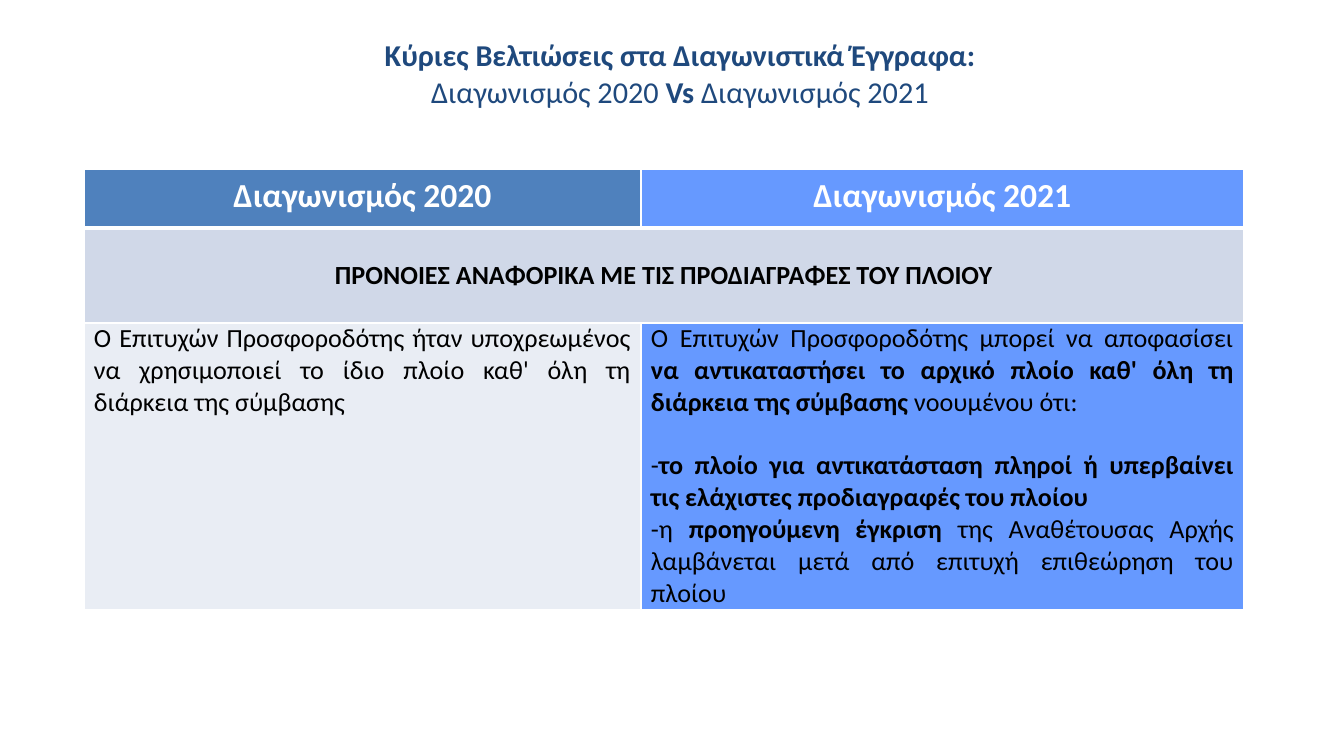
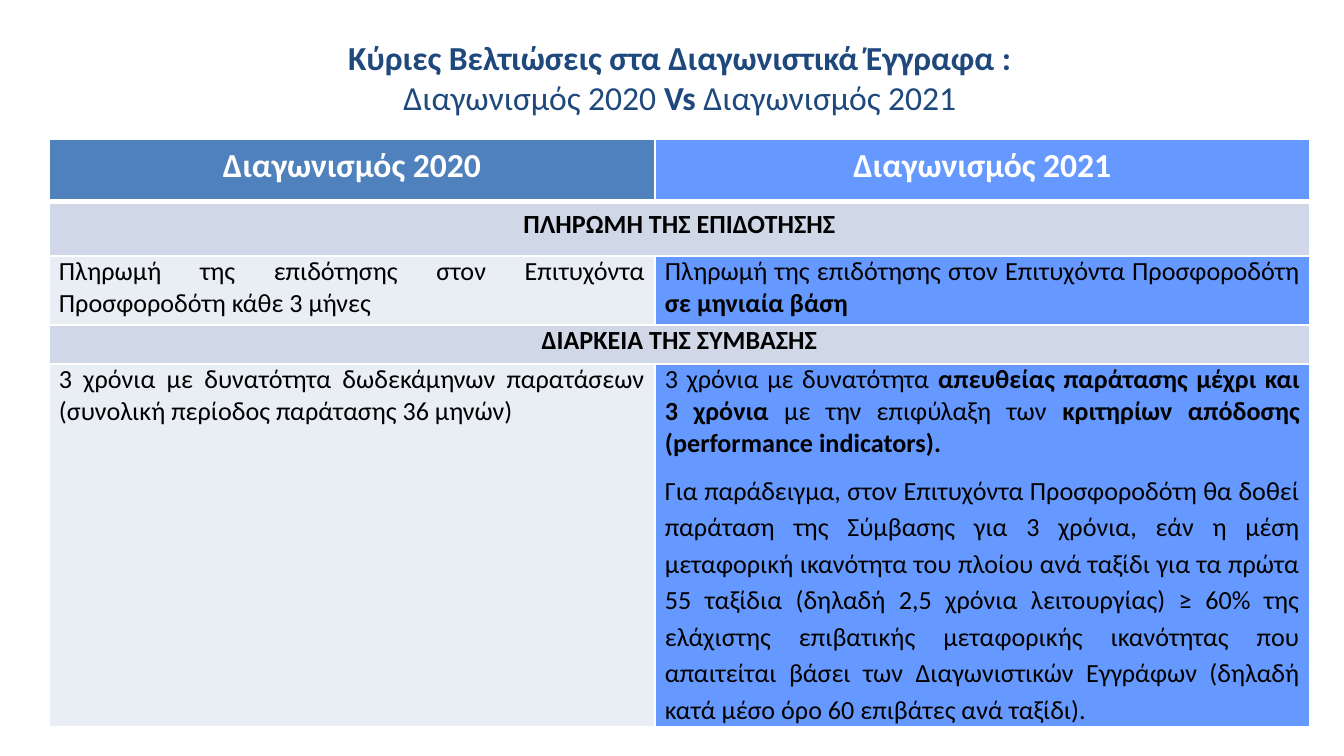
from dataclasses import dataclass

from lxml import etree
from pptx import Presentation, util as u
from pptx.dml import color
from pptx.enum import text
from pptx.oxml import ns

EMU_PER_PX = 914400 / 134.4
FONT = "Calibri"
COLORS = {
    "title": "1F497D",
    "white": "FFFFFF",
    "body": "000000",
    "old": "4F81BD",
    "new": "6699FF",
    "band": "D0D8E8",
    "old_body": "E9EDF4",
}
CENTER, JUSTIFY = text.PP_ALIGN.CENTER, text.PP_ALIGN.JUSTIFY
TOP, MIDDLE = text.MSO_ANCHOR.TOP, text.MSO_ANCHOR.MIDDLE
ROOMY, TIGHT = (13, 7), (10, 0)
YEARS = ("Διαγωνισμός 2020", "Διαγωνισμός 2021")


@dataclass
class Para:
    """Runs are (text, bold) pairs."""
    runs: list
    before: float = 0
    spacing: float = 1


@dataclass
class Band:
    """A heading row that spans both columns."""
    heading: str
    margins: tuple = TIGHT
    anchor: object = TOP


def px(length):
    return u.Emu(round(length * EMU_PER_PX))


def rgb(name):
    return color.RGBColor.from_string(COLORS[name])


def add_run(paragraph, words, size, color_name, bold):
    run = paragraph.add_run()
    run.text = words
    run.font.name = FONT
    run.font.size = u.Pt(size)
    run.font.bold = bold
    run.font.color.rgb = rgb(color_name)


def add_title(slide, top, height, heading, size):
    frame = slide.shapes.add_textbox(px(68), px(top), px(1224), px(height)).text_frame
    frame.word_wrap = True
    frame.vertical_anchor = MIDDLE
    paragraph = frame.paragraphs[0]
    paragraph.alignment = CENTER
    add_run(paragraph, heading, size, "title", True)
    paragraph.add_line_break()
    for words, bold in ((YEARS[0] + " ", False), ("Vs ", True), (YEARS[1], False)):
        add_run(paragraph, words, size, "title", bold)


def set_borders(cell, top, bottom):
    """Draw white borders; the line elements must come before the fill."""
    properties = cell._tc.get_or_add_tcPr()
    widths = {"a:lnL": 1, "a:lnR": 1, "a:lnT": top, "a:lnB": bottom}
    for index, (tag, width) in enumerate(widths.items()):
        line = etree.Element(ns.qn(tag), w=str(u.Pt(width)))
        fill = etree.SubElement(line, ns.qn("a:solidFill"))
        etree.SubElement(fill, ns.qn("a:srgbClr"), val=COLORS["white"])
        properties.insert(index, line)


def fill_cell(cell, paras, fill, align, margins, size=14, color_name="body", anchor=TOP):
    cell.fill.solid()
    cell.fill.fore_color.rgb = rgb(fill)
    cell.margin_left = cell.margin_right = px(margins[0])
    cell.margin_top = cell.margin_bottom = px(margins[1])
    cell.vertical_anchor = anchor
    frame = cell.text_frame
    for index, para in enumerate(paras):
        paragraph = frame.add_paragraph() if index else frame.paragraphs[0]
        paragraph.alignment = align
        paragraph.space_before = u.Pt(para.before)
        paragraph.line_spacing = para.spacing
        for words, bold in para.runs:
            add_run(paragraph, words, size, color_name, bold)


def add_comparison(slide, left, top, widths, heights, rows):
    """Add a table with a year header; each further row is a Band or a pair of cells."""
    table = slide.shapes.add_table(
        len(heights), 2, px(left), px(top), px(sum(widths)), px(sum(heights))).table
    table.horz_banding = False
    for column, width in zip(table.columns, widths):
        column.width = px(width)
    for index, height in enumerate(heights):
        table.rows[index].height = px(height)
        for cell in table.rows[index].cells:
            set_borders(cell, 3 if index == 1 else 1, 3 if index == 0 else 1)
    for column, (year, fill) in enumerate(zip(YEARS, ("old", "new"))):
        fill_cell(table.cell(0, column), [Para([(year, True)])], fill, CENTER, ROOMY,
                  size=18, color_name="white")
    for index, row in enumerate(rows, 1):
        first, second = table.cell(index, 0), table.cell(index, 1)
        if isinstance(row, Band):
            first.merge(second)
            fill_cell(first, [Para([(row.heading, True)])], "band", CENTER, row.margins,
                      anchor=row.anchor)
        else:
            fill_cell(first, row[0], "old_body", JUSTIFY, TIGHT)
            fill_cell(second, row[1], "new", JUSTIFY, TIGHT)


VESSEL_ROWS = [
    Band("ΠΡΟΝΟΙΕΣ ΑΝΑΦΟΡΙΚΑ ΜΕ ΤΙΣ ΠΡΟΔΙΑΓΡΑΦΕΣ ΤΟΥ ΠΛΟΙΟΥ", anchor=MIDDLE),
    (
        [Para([("Ο Επιτυχών Προσφοροδότης ήταν υποχρεωμένος να χρησιμοποιεί το ίδιο "
                "πλοίο καθ' όλη τη διάρκεια της σύμβασης", False)])],
        [Para([("Ο Επιτυχών Προσφοροδότης μπορεί να αποφασίσει ", False),
               ("να αντικαταστήσει το αρχικό πλοίο καθ' όλη τη διάρκεια της σύμβασης ", True),
               ("νοουμένου ότι:", False)]),
         Para([("-", False),
               ("το πλοίο για αντικατάσταση πληροί ή υπερβαίνει τις ελάχιστες "
                "προδιαγραφές του πλοίου", True)], before=17),
         Para([("-η ", False),
               ("προηγούμενη έγκριση ", True),
               ("της Αναθέτουσας Αρχής λαμβάνεται μετά από επιτυχή επιθεώρηση του "
                "πλοίου", False)])],
    ),
]

CONTRACT_ROWS = [
    Band("ΠΛΗΡΩΜΗ ΤΗΣ ΕΠΙΔΟΤΗΣΗΣ", margins=ROOMY),
    (
        [Para([("Πληρωμή της επιδότησης στον Επιτυχόντα Προσφοροδότη κάθε 3 μήνες", False)])],
        [Para([("Πληρωμή της επιδότησης στον Επιτυχόντα Προσφοροδότη ", False),
               ("σε μηνιαία βάση", True)])],
    ),
    Band("ΔΙΑΡΚΕΙΑ ΤΗΣ ΣΥΜΒΑΣΗΣ"),
    (
        [Para([("3 χρόνια με δυνατότητα δωδεκάμηνων παρατάσεων (συνολική περίοδος "
                "παράτασης 36 μηνών)", False)])],
        [Para([("3 χρόνια με δυνατότητα ", False),
               ("απευθείας παράτασης μέχρι και 3 χρόνια ", True),
               ("με την επιφύλαξη των ", False),
               ("κριτηρίων απόδοσης (performance indicators).", True)]),
         Para([("Για παράδειγμα, στον Επιτυχόντα Προσφοροδότη θα δοθεί παράταση της "
                "Σύμβασης για 3 χρόνια, εάν η μέση μεταφορική ικανότητα του πλοίου ανά "
                "ταξίδι για τα πρώτα 55 ταξίδια (δηλαδή 2,5 χρόνια λειτουργίας) ≥ 60% της "
                "ελάχιστης επιβατικής μεταφορικής ικανότητας που απαιτείται βάσει των "
                "Διαγωνιστικών Εγγράφων (δηλαδή κατά μέσο όρο 60 επιβάτες ανά ταξίδι).",
                False)], before=6, spacing=1.15)],
    ),
]


def main():
    presentation = Presentation()
    presentation.slide_width, presentation.slide_height = px(1344), px(756)
    blank = presentation.slide_layouts[6]

    slide = presentation.slides.add_slide(blank)
    add_title(slide, 32, 82, "Κύριες Βελτιώσεις στα Διαγωνιστικά Έγγραφα:", 16.2)
    add_comparison(slide, 84, 169, (557, 603), (59, 95, 287), VESSEL_ROWS)

    slide = presentation.slides.add_slide(blank)
    add_title(slide, 14, 126, "Κύριες Βελτιώσεις στα Διαγωνιστικά Έγγραφα :", 18)
    add_comparison(slide, 49, 139, (606, 655), (63, 54, 69, 39, 363), CONTRACT_ROWS)

    presentation.save("out.pptx")


if __name__ == "__main__":
    main()
